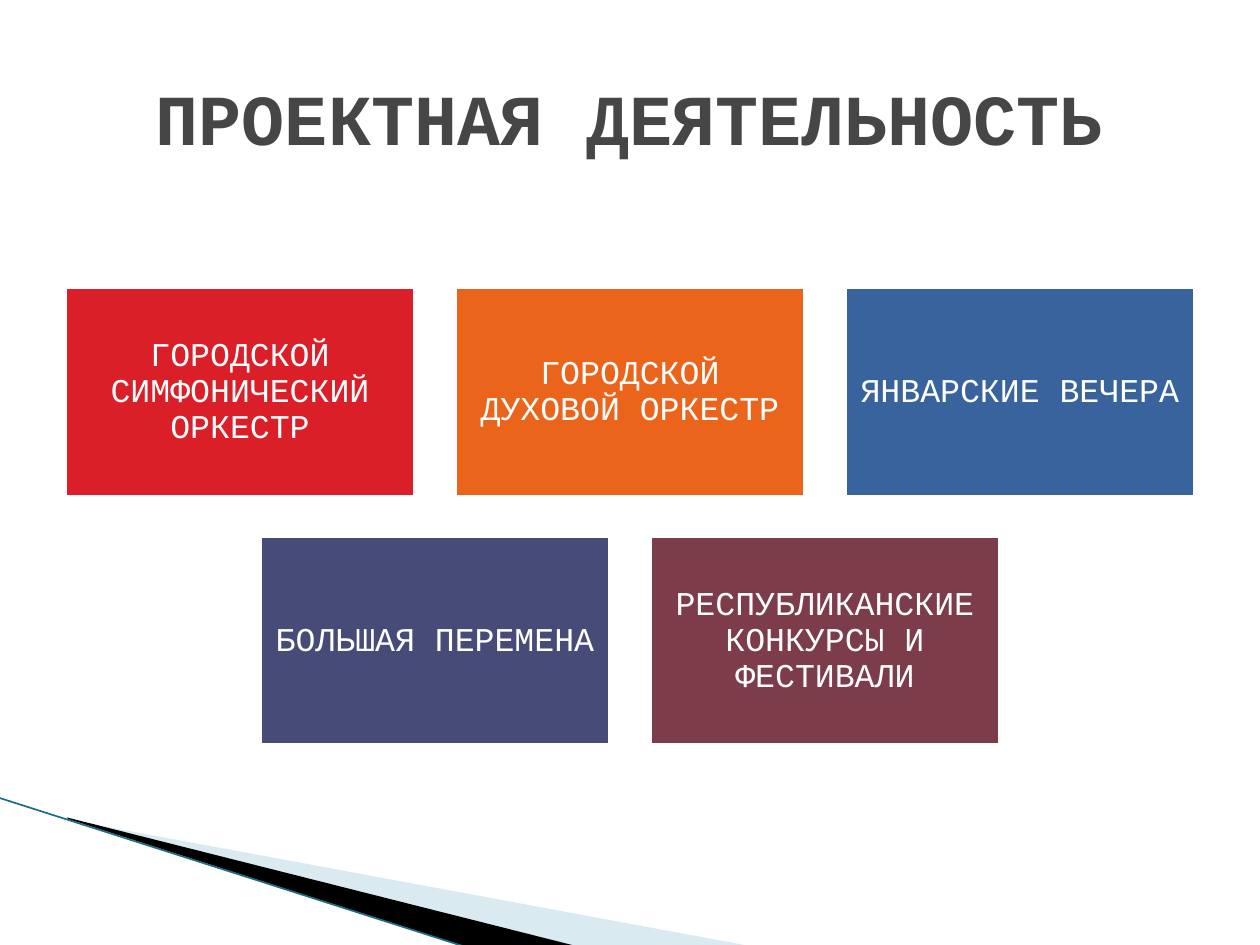
from pptx import Presentation
from pptx.dml.color import RGBColor
from pptx.enum.shapes import MSO_CONNECTOR, MSO_SHAPE
from pptx.enum.text import MSO_ANCHOR, PP_ALIGN
from pptx.oxml.ns import qn
from pptx.util import Cm, Pt
from lxml import etree

RECT = MSO_SHAPE.RECTANGLE
LINE = MSO_CONNECTOR.STRAIGHT
MIDDLE = MSO_ANCHOR.MIDDLE
CENTER = PP_ALIGN.CENTER


def color(code):
    return RGBColor.from_string(code)


def write(shape, text, size, code, bold=False, inset=0.25, spacing=1.0):
    frame = shape.text_frame
    frame.word_wrap = True
    frame.vertical_anchor = MIDDLE
    frame.margin_left = frame.margin_right = Cm(inset)
    frame.margin_top = frame.margin_bottom = Cm(inset)
    para = frame.paragraphs[0]
    para.alignment = CENTER
    para.line_spacing = spacing
    run = para.add_run()
    run.text = text
    run.font.name = "Courier New"
    run.font.size = Pt(size)
    run.font.bold = bold
    run.font.color.rgb = color(code)


deck = Presentation()
deck.slide_width, deck.slide_height = Cm(25.4), Cm(19.05)
slide = deck.slides.add_slide(deck.slide_layouts[6])
shapes = slide.shapes

# Corner wedges: fill, opacity in percent, outline in cm
wedges = [
    ("A0CBDC", 40, [(1.4, 16.53), (15.11, 19.07), (11.58, 19.07), (1.4, 16.51)]),
    ("000000", 100, [(1.35, 16.48), (11.61, 19.07), (9.45, 19.1), (1.37, 16.51)]),
]
for code, alpha, points in wedges:
    start, *rest = [(Cm(x), Cm(y)) for x, y in points]
    path = shapes.build_freeform(*start)
    path.add_line_segments(rest, close=True)
    wedge = path.convert_to_shape()
    wedge.shadow.inherit = False
    wedge.fill.solid()
    wedge.fill.fore_color.rgb = color(code)
    wedge.line.fill.background()
    if alpha < 100:
        tint = wedge.fill._xPr.find(qn("a:solidFill"))[0]
        etree.SubElement(tint, qn("a:alpha"), val=str(alpha * 1000))

# Corner line
edge = shapes.add_connector(LINE, Cm(-0.03), Cm(16.08), Cm(9.42), Cm(19.1))
edge.line.color.rgb = color("1B6E82")
edge.line.width = Pt(0.95)
etree.SubElement(edge._element.spPr, qn("a:effectLst"))

# Title
title = shapes.add_textbox(Cm(1.27), Cm(0.76), Cm(22.86), Cm(3.18))
write(title, "ПРОЕКТНАЯ ДЕЯТЕЛЬНОСТЬ", 41, "464646", bold=True)

# Project cards, each row centred on the slide
rows = [
    [
        ("ГОРОДСКОЙ СИМФОНИЧЕСКИЙ ОРКЕСТР", "DA1F28"),
        ("ГОРОДСКОЙ ДУХОВОЙ ОРКЕСТР", "EB641B"),
        ("ЯНВАРСКИЕ ВЕЧЕРА", "39639D"),
    ],
    [
        ("БОЛЬШАЯ ПЕРЕМЕНА", "474B78"),
        ("РЕСПУБЛИКАНСКИЕ КОНКУРСЫ И ФЕСТИВАЛИ", "7D3C4A"),
    ],
]
wide, high, gap, top = 7.14, 4.29, 0.72, 5.76
for i, row in enumerate(rows):
    left = (25.4 - len(row) * (wide + gap) + gap) / 2
    for j, (text, code) in enumerate(row):
        x = left + j * (wide + gap)
        y = top + i * (high + gap)
        card = shapes.add_shape(RECT, Cm(x), Cm(y), Cm(wide), Cm(high))
        card.shadow.inherit = False
        card.fill.solid()
        card.fill.fore_color.rgb = color(code)
        card.line.color.rgb = color("FFFFFF")
        card.line.width = Pt(4.33)
        write(card, text, 19, "FFFFFF", inset=0.2, spacing=0.9)

deck.save("out.pptx")
